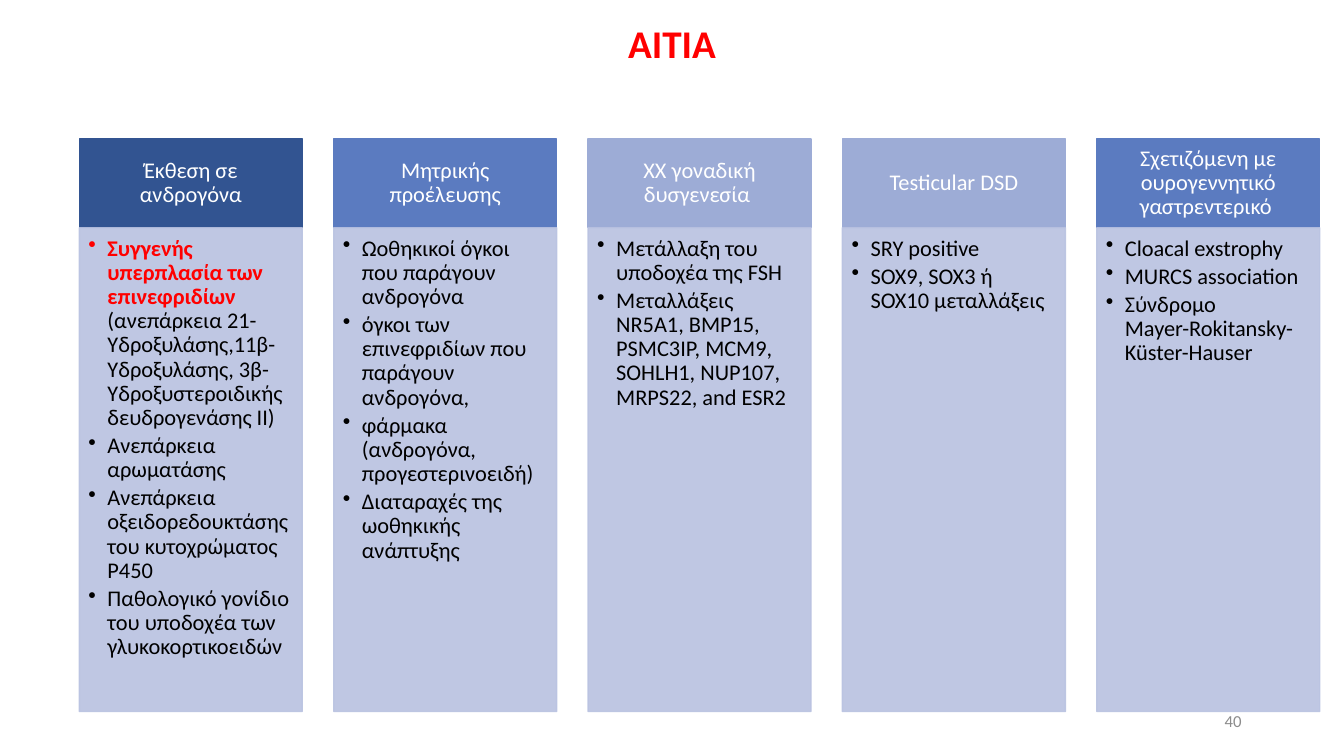
from pptx import Presentation
from pptx.util import Cm, Pt
from pptx.dml.color import RGBColor as RGB
from pptx.enum.shapes import MSO_SHAPE as Shape
from pptx.enum.text import PP_ALIGN as Align, MSO_ANCHOR as Anchor
from pptx.oxml.ns import qn
from lxml.etree import SubElement

COLORS = {"navy": "325491", "blue": "5B7BC0", "pale": "9DACD6", "body": "B9C2E1",
          "red": "FF0000", "black": "000000", "white": "FFFFFF", "gray": "8C8C8C"}

# Columns: header colour, header, bullets
COLUMNS = [
    ("navy", "Έκθεση σε ανδρογόνα", [
        "(ανεπάρκεια 21-Υδροξυλάσης,11β-Υδροξυλάσης, 3β-Υδροξυστεροιδικής δευδρογενάσης ΙΙ)",
        "Ανεπάρκεια αρωματάσης",
        "Ανεπάρκεια οξειδορεδουκτάσης του κυτοχρώματος Ρ450",
        "Παθολογικό γονίδιο του υποδοχέα των γλυκοκορτικοειδών"]),
    ("blue", "Μητρικής προέλευσης", [
        "Ωοθηκικοί όγκοι που παράγουν ανδρογόνα",
        "όγκοι των επινεφριδίων που παράγουν ανδρογόνα,",
        "φάρμακα (ανδρογόνα, προγεστερινοειδή)",
        "Διαταραχές της ωοθηκικής ανάπτυξης"]),
    ("pale", "ΧΧ γοναδική δυσγενεσία ", [
        "Μετάλλαξη του υποδοχέα της FSH",
        "Μεταλλάξεις NR5A1, BMP15, PSMC3IP, MCM9, SOHLH1, NUP107, MRPS22, and ESR2"]),
    ("pale", "Testicular DSD", [
        "SRY positive",
        "SOX9, SOX3 ή SOX10 μεταλλάξεις"]),
    ("blue", "Σχετιζόμενη με ουρογεννητικό γαστρεντερικό ", [
        "Cloacal exstrophy",
        "MURCS association",
        "Σύνδρομο\nMayer-Rokitansky-Küster-Hauser"]),
]
LEAD = "Συγγενής υπερπλασία των επινεφριδίων "

LEFT, TOP, STEP, WIDE = 2, 3.5, 6.41, 5.62
HEAD, BODY = 2.24, 12.19


def add_run(para, text, size, color, bold=False):
    run = para.add_run()
    run.text = text
    font = run.font
    font.name, font.size, font.bold = "Calibri", Pt(size), bold
    font.color.rgb = RGB.from_string(COLORS[color])


def add_box(left, top, high, color, margins):
    box = slide.shapes.add_shape(Shape.RECTANGLE, Cm(left), Cm(top), Cm(WIDE), Cm(high))
    box.shadow.inherit = False
    box.fill.solid()
    box.line.width = Pt(1)
    for paint in (box.fill.fore_color, box.line.color):
        paint.rgb = RGB.from_string(COLORS[color])
    frame = box.text_frame
    frame.word_wrap = True
    (frame.margin_left, frame.margin_top,
     frame.margin_right, frame.margin_bottom) = [Cm(gap) for gap in margins]
    return box


deck = Presentation()
deck.slide_width, deck.slide_height = Cm(33.87), Cm(19.05)
slide = deck.slides.add_slide(deck.slide_layouts[5])

# Title
title = slide.shapes.title
title.left, title.top, title.width, title.height = Cm(0), Cm(0), Cm(33.87), Cm(2.31)
title.text_frame.vertical_anchor = Anchor.MIDDLE
para = title.text_frame.paragraphs[0]
para.alignment = Align.CENTER
para.line_spacing = 0.9
add_run(para, "ΑΙΤΙΑ", 28, "red", True)

for col, (color, header, items) in enumerate(COLUMNS):
    left = LEFT + col * STEP

    # Header
    box = add_box(left, TOP, HEAD, color, (0.3, 0.18, 0.3, 0.18))
    box.text_frame.vertical_anchor = Anchor.MIDDLE
    para = box.text_frame.paragraphs[0]
    para.alignment = Align.CENTER
    para.line_spacing = 0.9
    add_run(para, header, 16, "white")

    # Body, slightly see-through
    box = add_box(left, TOP + HEAD, BODY, "body", (0.23, 0.23, 0.3, 0.36))
    for paint in box.element.spPr.iter(qn("a:srgbClr")):
        SubElement(paint, qn("a:alpha"), val="90000")
    frame = box.text_frame
    frame.vertical_anchor = Anchor.TOP

    # Bullets
    for row, item in enumerate(items):
        para = frame.add_paragraph() if row else frame.paragraphs[0]
        props = para._p.get_or_add_pPr()
        props.set("marL", str(Cm(0.48)))
        props.set("indent", str(-Cm(0.48)))
        SubElement(props, qn("a:buChar"), char="•")
        para.level = 1
        para.alignment = Align.LEFT
        para.line_spacing = 0.9
        para.space_after = Pt(2.8)
        if col == row == 0:
            add_run(para, LEAD, 16, "red", True)
        for part, line in enumerate(item.split("\n")):
            if part:
                para.add_line_break()
            add_run(para, line, 16, "black")

# Slide number
note = slide.shapes.add_textbox(Cm(23.92), Cm(17.66), Cm(7.62), Cm(1.01))
note.text_frame.word_wrap = True
note.text_frame.vertical_anchor = Anchor.MIDDLE
para = note.text_frame.paragraphs[0]
para.alignment = Align.RIGHT
add_run(para, "40", 12, "gray")

deck.save("out.pptx")
